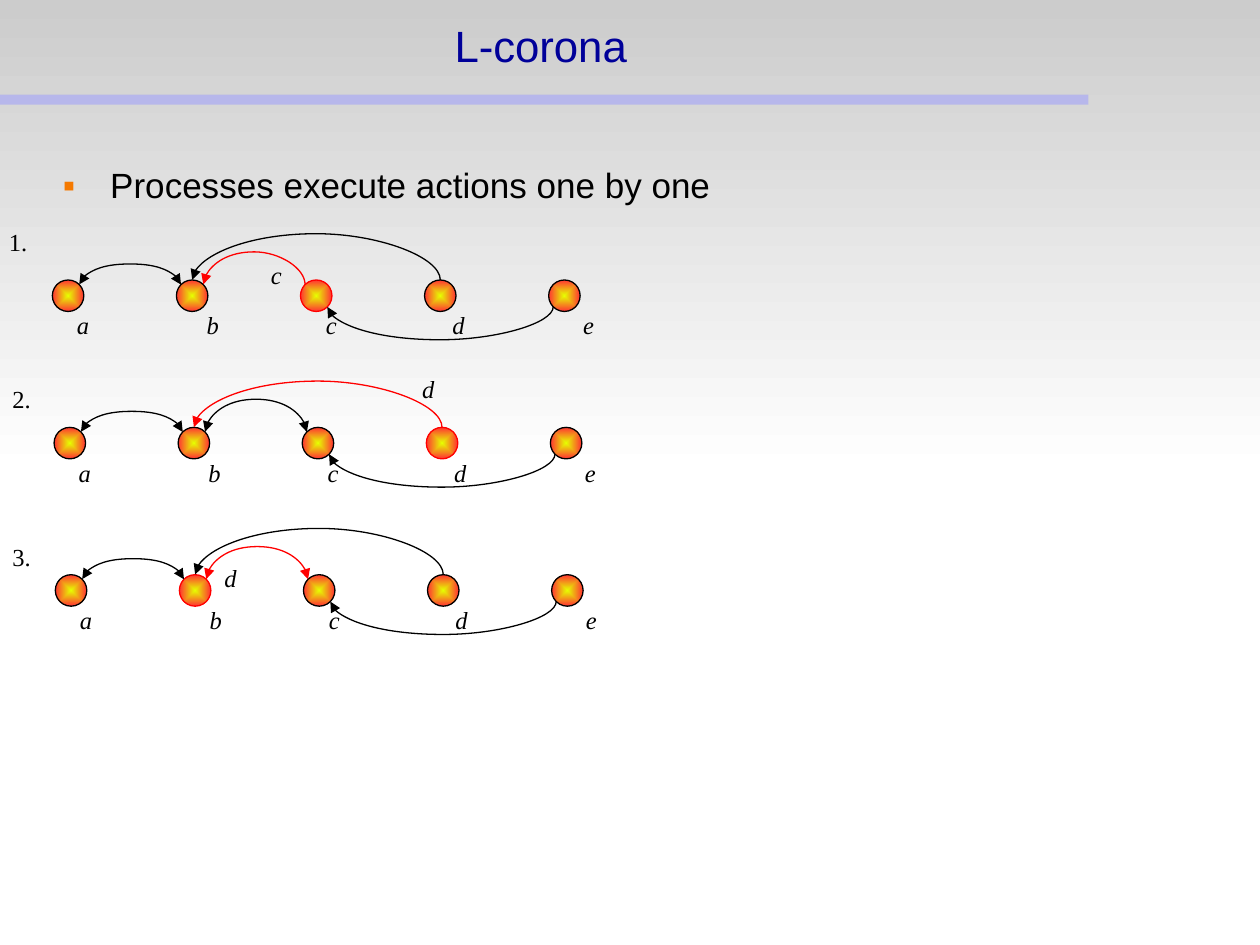
import pptx
import pptx.util
import pptx.dml.color
import pptx.enum.shapes
import pptx.enum.text
import pptx.oxml
import pptx.oxml.ns

Pt = pptx.util.Pt
RGBColor = pptx.dml.color.RGBColor
SHAPE = pptx.enum.shapes.MSO_SHAPE
CURVE = pptx.enum.shapes.MSO_CONNECTOR.CURVE
ALIGN = pptx.enum.text.PP_ALIGN
ANCHOR = pptx.enum.text.MSO_ANCHOR
qn = pptx.oxml.ns.qn

BLACK = RGBColor(0x00, 0x00, 0x00)
RED = RGBColor(0xFF, 0x00, 0x00)
NAVY = RGBColor(0x00, 0x00, 0x99)
LILAC = RGBColor(0x99, 0x99, 0xFF)
GRAY = RGBColor(0xCC, 0xCC, 0xCC)
WHITE = RGBColor(0xFF, 0xFF, 0xFF)
YELLOW = RGBColor(0xE6, 0xFF, 0x00)
CORAL = RGBColor(0xFF, 0x33, 0x33)
ORANGE = RGBColor(0xF5, 0x79, 0x00)

SANS = "Arial"
SERIF = "Times New Roman"
PITCH = 70.9
SIZE = 18
EDGE = 2.64
THIN = 0.12
NAMES = "abcde"
SHIFTS = [6.8, 10, 6.9, 8.6, 12]


def make(tag, **values):
    node = pptx.oxml.parse_xml(f'<a:{tag} {pptx.oxml.ns.nsdecls("a")}/>')
    for key, value in values.items():
        node.set(key, str(value))
    return node


def add_text(slide, box, text, size=14, font=SERIF, color=BLACK, italic=False,
             align=ALIGN.LEFT, anchor=ANCHOR.TOP, wrap=False,
             inset=(7.2, 3.6, 7.2, 3.6), space=None, after=None, bullet=None):
    frame = slide.shapes.add_textbox(*map(Pt, box)).text_frame
    frame.word_wrap = wrap
    frame.vertical_anchor = anchor
    (frame.margin_left, frame.margin_top,
     frame.margin_right, frame.margin_bottom) = map(Pt, inset)
    para = frame.paragraphs[0]
    para.alignment = align
    para.line_spacing = space
    if after:
        para.space_after = Pt(after)
    if bullet:
        props = para._p.get_or_add_pPr()
        props.set("marL", str(Pt(27)))
        props.set("indent", str(Pt(-27)))
        tint = make("buClr")
        tint.append(make("srgbClr", val=ORANGE))
        props.append(tint)
        props.append(make("buFont", typeface=font))
        props.append(make("buChar", char=bullet))
    run = para.add_run()
    run.text = text
    run.font.size = Pt(size)
    run.font.name = font
    run.font.italic = italic
    run.font.color.rgb = color


def add_form(slide, kind, box, line=None):
    form = slide.shapes.add_shape(kind, *map(Pt, box))
    form.shadow.inherit = False
    if line is None:
        form.line.fill.background()
    else:
        form.line.color.rgb = line
        form.line.width = Pt(0.75)
    return form


def blend(form, first, last):
    form.fill.gradient()
    for stop, color in zip(form.fill.gradient_stops, (first, last)):
        stop.color.rgb = color


def draw_back(slide, wide, high):
    shade = add_form(slide, SHAPE.ROUNDED_RECTANGLE, (0, 0, wide, high / 2))
    shade.adjustments[0] = 0
    blend(shade, GRAY, WHITE)
    shade.fill.gradient_angle = 270
    bar = add_form(slide, SHAPE.RECTANGLE, (0, 54, 622, 5.8))
    bar.fill.solid()
    bar.fill.fore_color.rgb = LILAC
    tint = bar.element.spPr.find(qn("a:solidFill"))[0]
    tint.append(make("alpha", val=50000))


def draw_node(slide, left, top, color):
    ball = add_form(slide, SHAPE.OVAL, (left, top, SIZE, SIZE), color)
    blend(ball, YELLOW, CORAL)
    grad = ball.element.spPr.find(qn("a:gradFill"))
    focus = make("path", path="shape")
    focus.append(make("fillToRect", l=50000, t=50000, r=50000, b=50000))
    grad.replace(grad.find(qn("a:lin")), focus)


def draw_arc(slide, start, end, y, rise, color, double=False, down=False):
    mid, half = (start + end) / 2, (start - end) / 2
    if down:
        half = -half
    arc = slide.shapes.add_connector(
        CURVE, Pt(mid - THIN / 2), Pt(y + half), Pt(mid + THIN / 2), Pt(y - half))
    arc.line.color.rgb = color
    arc.line.width = Pt(0.75)
    props = arc.element.spPr
    props.find(qn("a:xfrm")).set("rot", str((90 if down else 270) * 60000))
    geom = props.find(qn("a:prstGeom"))
    guides = geom.find(qn("a:avLst"))
    if guides is None:
        guides = make("avLst")
        geom.append(guides)
    value = round(rise / THIN * 100000)
    guides.append(make("gd", name="adj1", fmla=f"val {value}"))
    line = props.find(qn("a:ln"))
    if double:
        line.append(make("headEnd", type="triangle"))
    line.append(make("tailEnd", type="triangle"))
    props.append(make("effectLst"))


def draw_row(slide, left, top, hot, link, double, note, spot):
    def tone(name):
        return RED if name == link else BLACK

    def letter(text, x, y):
        add_text(slide, (left + x, top + y, 21.6, 24.2), text,
                 italic=True, align=ALIGN.CENTER)

    a, b, c, d, e = (left + i * PITCH for i in range(5))
    for name, x, shift in zip(NAMES, (a, b, c, d, e), SHIFTS):
        letter(name, x - left + shift, 13.9)
        draw_node(slide, x, top, RED if name == hot else BLACK)
    far = SIZE - EDGE
    draw_arc(slide, e + EDGE, c + far, top + far, 20, BLACK, down=True)
    draw_arc(slide, d + SIZE / 2, b + SIZE / 2, top, 28, tone("db"))
    draw_arc(slide, c + EDGE, b + far, top + EDGE, 19.8, tone("cb"), double)
    draw_arc(slide, b + EDGE, a + far, top + EDGE, 12.5, BLACK, True)
    letter(note, *spot)


def main():
    deck = pptx.Presentation()
    deck.slide_width, deck.slide_height = Pt(720), Pt(540)
    slide = deck.slides.add_slide(deck.slide_layouts[6])
    draw_back(slide, 720, 540)
    add_text(slide, (0, 0, 618, 54), "L-corona", size=25, font=SANS, color=NAVY,
             align=ALIGN.CENTER, anchor=ANCHOR.MIDDLE, wrap=True,
             inset=(0, 0, 0, 0), space=0.98)
    rows = [
        (29.9, -2, "c", "cb", False, "c", (117.2, -15.1)),
        (30.9, 0, "d", "db", True, "d", (203, -33.8)),
        (31.6, 0, "b", "cb", True, "d", (89.4, -10.1)),
    ]
    for i, (left, edge, *state) in enumerate(rows):
        add_text(slide, (edge, 126 + 90 * i, 27, 24), f"{i + 1}.",
                 inset=(7.2, 3.6, 0, 3.6), wrap=True)
        draw_row(slide, left, 160 + 84.2 * i, *state)
    add_text(slide, (36, 93.6, 648, 356.4), "Processes execute actions one by one",
             size=20, font=SANS, wrap=True, inset=(0, 1.4, 0, 0),
             space=0.95, after=14.2, bullet="▪")
    deck.save("out.pptx")


if __name__ == "__main__":
    main()
